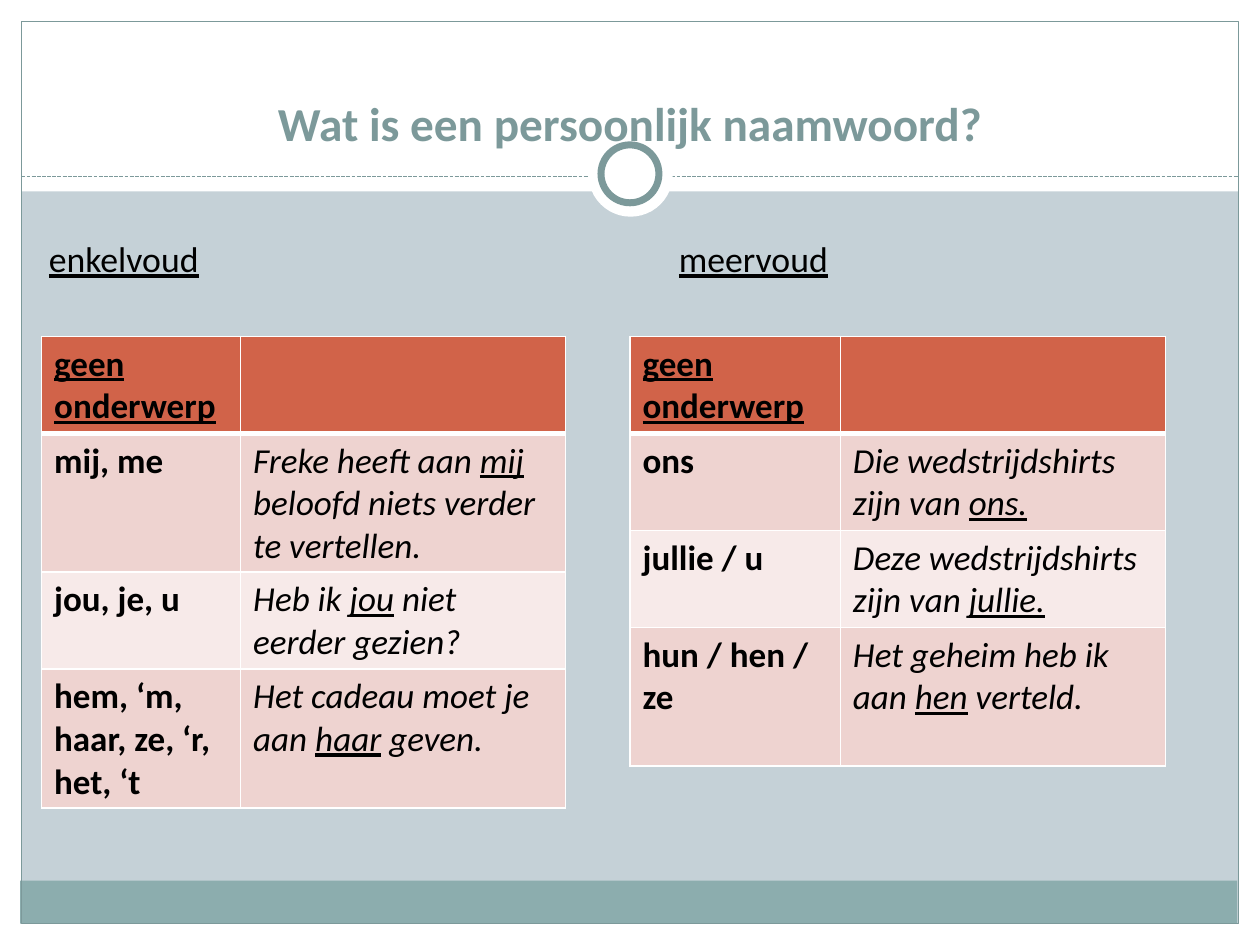
from dataclasses import dataclass

from lxml.etree import SubElement
from pptx import Presentation
from pptx.dml.color import RGBColor
from pptx.enum.dml import MSO_LINE_DASH_STYLE as Dash
from pptx.enum.shapes import MSO_CONNECTOR as Connector, MSO_SHAPE as Shape
from pptx.enum.text import MSO_ANCHOR as Anchor, PP_ALIGN as Align
from pptx.oxml.ns import qn
from pptx.util import Inches, Pt


@dataclass(frozen=True)
class Theme:
    font: str = "Calibri"
    background: str = "C5D1D7"
    white: str = "FFFFFF"
    black: str = "000000"
    accent: str = "7C999A"
    footer: str = "8CADAE"
    header: str = "D16349"
    bands: tuple = ("EED3D0", "F7EAE9")
    title_size: float = 27
    label_size: float = 20.4
    table_size: float = 20


THEME = Theme()


def rgb(code):
    return RGBColor.from_string(code)


def write(frame, text, *, size, color=THEME.black, bold=False, italic=False,
          align=Align.LEFT):
    """Fill a text frame; parts between underscores are underlined."""
    paragraph = frame.paragraphs[0]
    paragraph.alignment = align
    for line_number, line in enumerate(text.split("\n")):
        if line_number:
            paragraph.add_line_break()
        for part_number, part in enumerate(line.split("_")):
            if not part:
                continue
            run = paragraph.add_run()
            run.text = part
            font = run.font
            font.name, font.size = THEME.font, Pt(size)
            font.color.rgb = rgb(color)
            font.bold, font.italic = bold, italic
            font.underline = part_number % 2 == 1


class SlideBuilder:
    def __init__(self, slide, theme):
        self.slide, self.theme = slide, theme
        slide.background.fill.solid()
        slide.background.fill.fore_color.rgb = rgb(theme.background)

    def shape(self, kind, box, fill=None, line=None, width=0.75):
        shape = self.slide.shapes.add_shape(kind, *map(Inches, box))
        shape.shadow.inherit = False
        if fill:
            shape.fill.solid()
            shape.fill.fore_color.rgb = rgb(fill)
        else:
            shape.fill.background()
        if line:
            shape.line.color.rgb = rgb(line)
            shape.line.width = Pt(width)
        else:
            shape.line.fill.background()

    def dashed_line(self, start, end):
        line = self.slide.shapes.add_connector(
            Connector.STRAIGHT, *map(Inches, start + end))
        line.line.color.rgb = rgb(self.theme.accent)
        line.line.width = Pt(0.75)
        line.line.dash_style = Dash.SQUARE_DOT
        SubElement(line._element.spPr, qn("a:effectLst"))

    def text(self, box, text, anchor=Anchor.TOP, **style):
        frame = self.slide.shapes.add_textbox(*map(Inches, box)).text_frame
        frame.word_wrap = True
        frame.vertical_anchor = anchor
        write(frame, text, **style)

    def borders(self, cell, bottom=1, top=1):
        properties = cell._tc.get_or_add_tcPr()
        for side, width in (("L", 1), ("R", 1), ("T", top), ("B", bottom)):
            line = SubElement(properties, qn(f"a:ln{side}"), w=str(Pt(width)))
            fill = SubElement(line, qn("a:solidFill"))
            SubElement(fill, qn("a:srgbClr"), val=self.theme.white)

    def table(self, left, top, widths, heights, rows):
        box = (left, top, sum(widths), sum(heights))
        table = self.slide.shapes.add_table(
            len(rows), len(widths), *map(Inches, box)).table
        for column, width in zip(table.columns, widths):
            column.width = Inches(width)
        for row_number, (height, row) in enumerate(zip(heights, rows)):
            table.rows[row_number].height = Inches(height)
            if row_number:
                fill = self.theme.bands[(row_number - 1) % 2]
            else:
                fill = self.theme.header
            for column_number, text in enumerate(row):
                cell = table.cell(row_number, column_number)
                self.borders(cell, bottom=1 if row_number else 3,
                             top=3 if row_number == 1 else 1)
                cell.fill.solid()
                cell.fill.fore_color.rgb = rgb(fill)
                write(cell.text_frame, text, size=self.theme.table_size,
                      bold=column_number == 0, italic=column_number == 1)


HEADER_ROW = ("_geen onderwerp_", "")
SINGULAR = [
    HEADER_ROW,
    ("mij, me", "Freke heeft aan _mij_ beloofd niets verder te vertellen."),
    ("jou, je, u", "Heb ik _jou_ niet eerder gezien?"),
    ("hem, ‘m, \nhaar, ze, ‘r, \nhet, ‘t",
     "Het cadeau moet je aan _haar_ geven."),
]
PLURAL = [
    HEADER_ROW,
    ("ons", "Die wedstrijdshirts zijn van _ons._"),
    ("jullie / u", "Deze wedstrijdshirts zijn van _jullie._"),
    ("hun / hen / ze", "Het geheim heb ik aan _hen_ verteld."),
]


def main():
    deck = Presentation()
    deck.slide_width, deck.slide_height = Inches(10), Inches(7.5)
    page = SlideBuilder(deck.slides.add_slide(deck.slide_layouts[6]), THEME)

    # White margins and title band
    for margin in ((0, 7.33, 10, 0.17), (0, 0, 10, 1.52),
                   (0, 0, 0.17, 7.5), (9.83, 0, 0.17, 7.5)):
        page.shape(Shape.RECTANGLE, margin, THEME.white)

    # Footer band, frame and divider with ring
    page.shape(Shape.RECTANGLE, (0.16, 6.99, 9.66, 0.34), THEME.footer)
    page.shape(Shape.RECTANGLE, (0.17, 0.17, 9.66, 7.16), line=THEME.accent)
    page.dashed_line((0.17, 1.4), (9.83, 1.4))
    page.shape(Shape.OVAL, (4.67, 1.05, 0.67, 0.67), THEME.white)
    page.shape(Shape.OVAL, (4.77, 1.15, 0.46, 0.46), THEME.white,
               THEME.accent, 4)

    # Title
    page.text((0.5, 0.67, 9, 0.58), "Wat is een persoonlijk naamwoord?",
              Anchor.BOTTOM, size=THEME.title_size, color=THEME.accent,
              bold=True, align=Align.CENTER)

    # Singular and plural: label above table
    short, tall = 0.77, 1.1
    for label, label_left, table_left, first_width, heights, rows in (
            ("enkelvoud", 0.29, 0.33, 1.58, (short, tall, short, tall),
             SINGULAR),
            ("meervoud", 5.29, 5, 1.67, (short, short, short, tall), PLURAL)):
        page.text((label_left, 1.83, 3, 0.44), f"_{label}_",
                  size=THEME.label_size)
        page.table(table_left, 2.67, (first_width, 2.58), heights, rows)

    deck.save("out.pptx")


if __name__ == "__main__":
    main()
